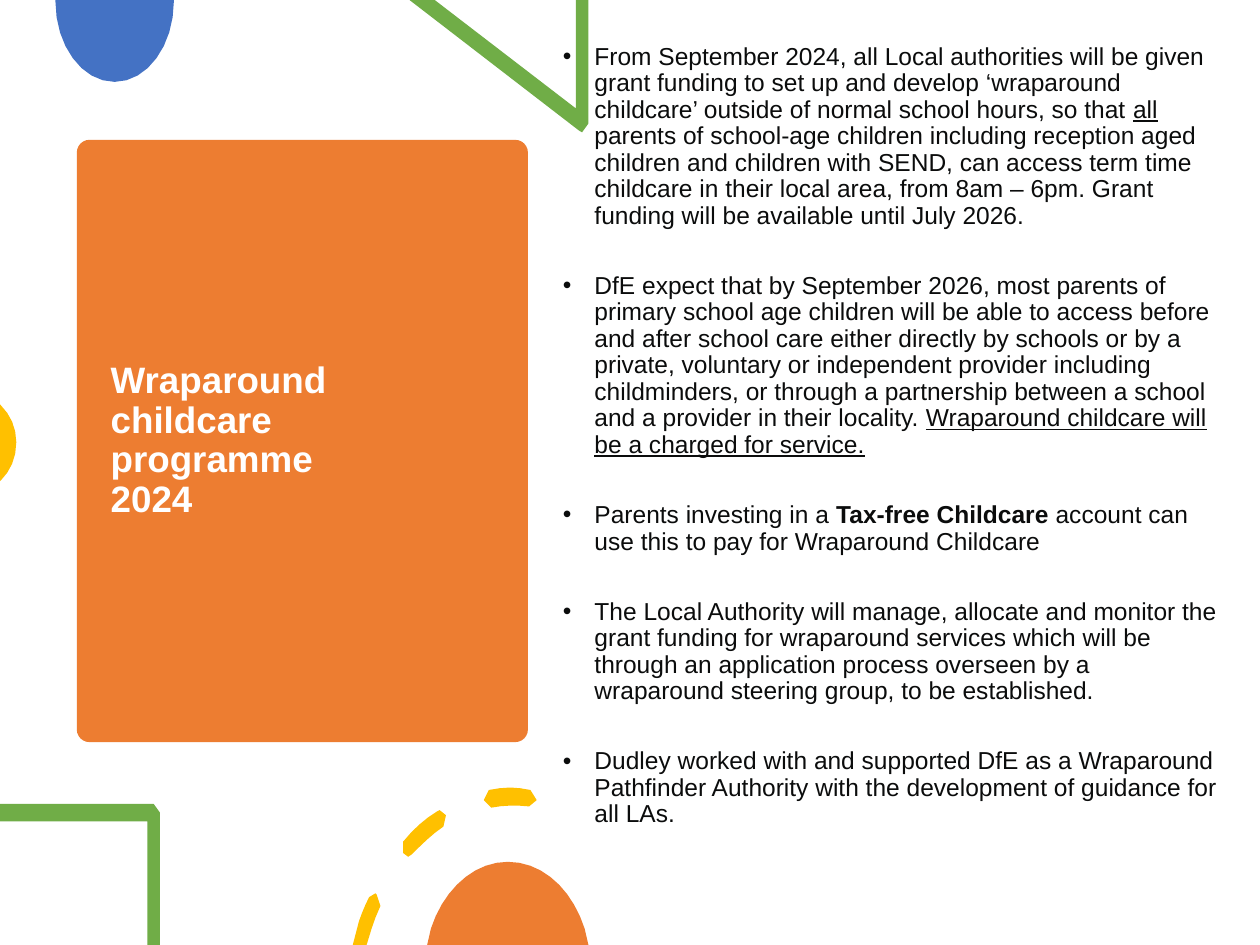
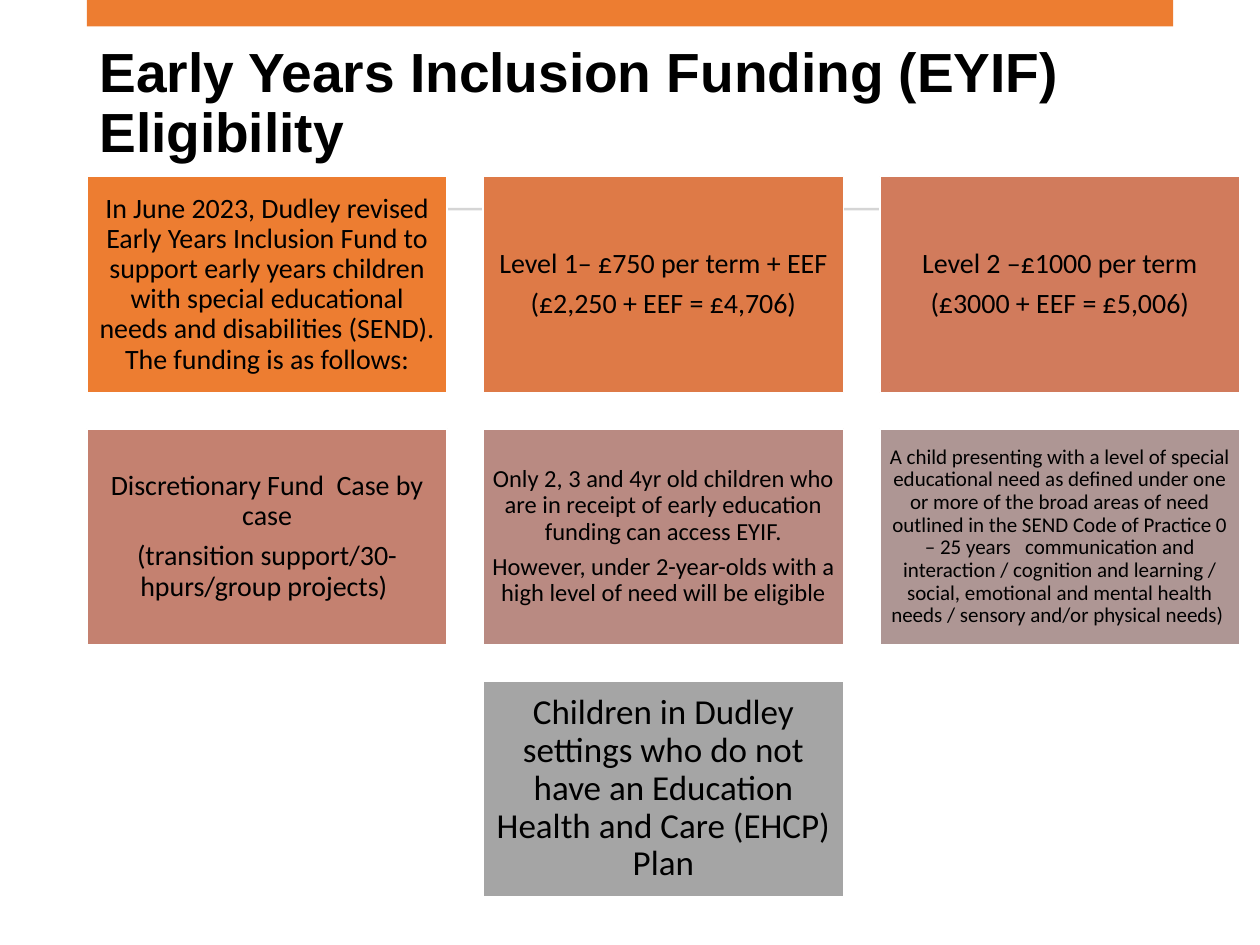
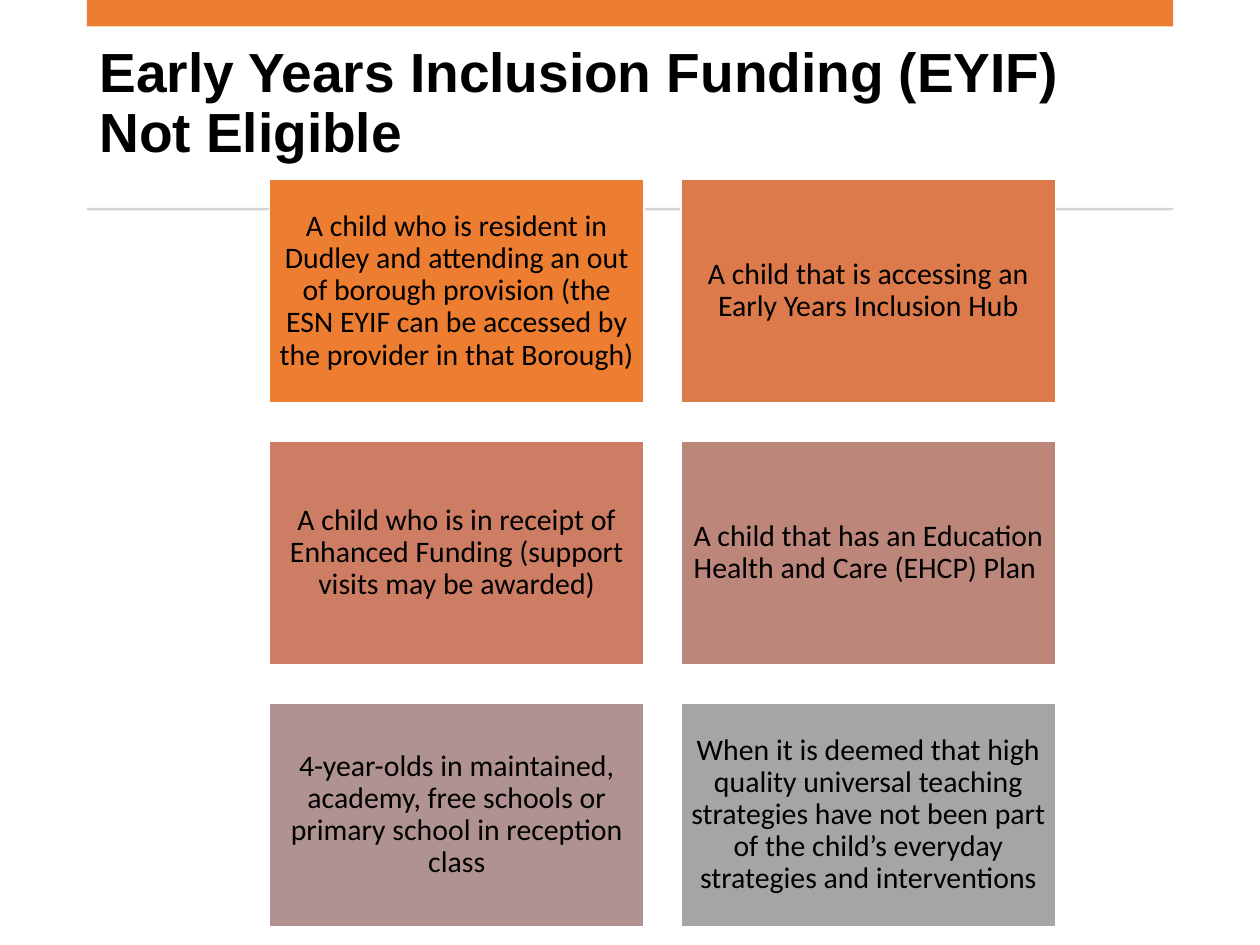
"""Build three slides on wraparound childcare and early years inclusion funding."""
import math

import pptx
import pptx.dml.color
import pptx.enum.shapes
import pptx.enum.text
import pptx.oxml
import pptx.oxml.ns
import pptx.util

Inches = pptx.util.Inches
Pt = pptx.util.Pt
SHAPES = pptx.enum.shapes.MSO_SHAPE
ALIGN = pptx.enum.text.PP_ALIGN
MIDDLE = pptx.enum.text.MSO_ANCHOR.MIDDLE
TOP = pptx.enum.text.MSO_ANCHOR.TOP

COLOURS = {
    "white": "FFFFFF", "black": "000000", "ink": "0B0C0C", "rule": "D5D5D5",
    "orange": "ED7D31", "blue": "4472C4", "green": "70AD47", "yellow": "FFC000",
    "grey": "A5A5A5", "copper": "DE7A47", "terracotta": "D17B5C",
    "clay": "C48170", "rose": "B98A82", "mauve": "AE9694",
    "amber": "DC7A4B", "brick": "CC7D64", "blush": "BD867B", "dusk": "B09391",
}

HEADING_FONT = {"name": "Arial", "bold": True}
BODY_FONT = {"name": "Arial", "size": Pt(14)}
TILE_FONT = {"name": "Calibri"}
TILE_GAP = 0.1
TILE_RATIO = 0.6
STEPS_PER_INCH = 10

CORNER_SHAPES = [
    ("blue", 0.44, 0, [[
        (0.94, 0), (0, 0), (0, 0.01),
        (0, 0.36, 0.21, 0.65, 0.47, 0.65), (0.73, 0.65, 0.94, 0.36, 0.94, 0.01)]]),
    ("green", 3.25, 0, [[
        (1.42, 0), (1.32, 0), (1.32, 0.86), (0.2, 0), (0, 0), (1.35, 1.04),
        (1.36, 1.05, 1.36, 1.05, 1.37, 1.05), (1.4, 1.05, 1.42, 1.02, 1.42, 0.98)]]),
    ("yellow", 0, 3.21, [[
        (0, 0), (0, 0.61), (0.01, 0.6),
        (0.08, 0.53, 0.13, 0.43, 0.13, 0.3), (0.13, 0.18, 0.08, 0.08, 0.01, 0.01)]]),
    ("green", 0, 6.38, [[
        (1.22, 0), (0, 0), (0, 0.14), (1.17, 0.14), (1.17, 1.12), (1.27, 1.12),
        (1.27, 0.07), (1.27, 0.03, 1.25, 0, 1.22, 0)]]),
    ("yellow", 2.8, 6.25, [
        [(0.18, 0.84), (0.16, 0.83, 0.14, 0.85, 0.13, 0.87),
         (0.1, 0.93, 0.07, 1, 0.05, 1.06), (0, 1.25), (0.11, 1.25), (0.15, 1.12),
         (0.17, 1.06, 0.19, 1, 0.22, 0.94), (0.23, 0.91, 0.22, 0.86, 0.19, 0.85)],
        [(0.69, 0.18), (0.68, 0.18, 0.68, 0.18, 0.67, 0.19),
         (0.57, 0.25, 0.48, 0.33, 0.4, 0.43), (0.38, 0.45, 0.38, 0.5, 0.4, 0.52),
         (0.41, 0.54, 0.42, 0.55, 0.44, 0.55), (0.45, 0.55, 0.46, 0.54, 0.47, 0.53),
         (0.55, 0.45, 0.63, 0.37, 0.72, 0.31), (0.74, 0.29, 0.75, 0.25, 0.74, 0.22),
         (0.73, 0.19, 0.71, 0.18, 0.69, 0.18)],
        [(1.25, 0), (1.19, 0, 1.14, 0.01, 1.08, 0.02),
         (1.06, 0.02, 1.04, 0.06, 1.04, 0.1), (1.04, 0.13, 1.06, 0.16, 1.1, 0.16),
         (1.2, 0.14, 1.3, 0.14, 1.4, 0.15), (1.43, 0.16, 1.45, 0.13, 1.46, 0.1),
         (1.46, 0.06, 1.44, 0.02, 1.41, 0.02), (1.36, 0.01, 1.3, 0, 1.25, 0)]]),
    ("orange", 3.39, 6.84, [[
        (0.64, 0), (0.37, 0, 0.13, 0.22, 0.03, 0.53), (0, 0.66), (1.28, 0.66),
        (1.25, 0.53), (1.15, 0.22, 0.92, 0, 0.64, 0)]]),
]

PROGRAMME_POINTS = [
    [("From September 2024, all Local authorities will be given grant funding to set up "
      "and develop ‘wraparound childcare’ outside of normal school hours, so that ", {}),
     ("all", {"underline": True}),
     (" parents of school-age children including reception aged children and children "
      "with SEND, can access term time childcare in their local area, from 8am – 6pm. "
      "Grant funding will be available until July 2026.", {})],
    [("DfE expect that by September 2026, most parents of primary school age children "
      "will be able to access before and after school care either directly by schools "
      "or by a private, voluntary or independent provider including childminders, or "
      "through a partnership between a school and a provider in their locality. ", {}),
     ("Wraparound childcare will be a charged for service.", {"underline": True})],
    [("Parents investing in a ", {}),
     ("Tax-free Childcare ", {"bold": True}),
     ("account can use this to pay for Wraparound Childcare", {})],
    [("The Local Authority will manage, allocate and monitor the grant funding for "
      "wraparound services which will be through an application process overseen by a "
      "wraparound steering group, to be established.", {})],
    [("Dudley worked with and supported DfE as a Wraparound Pathfinder Authority with "
      "the development of guidance for all LAs.", {})],
]

ELIGIBLE_TILES = [
    ("orange", 16, ["In June 2023, Dudley revised Early Years Inclusion Fund to support "
                    "early years children with special educational needs and disabilities "
                    "(SEND). The funding is as follows:"]),
    ("copper", 16, ["Level 1– £750 per term + EEF", "(£2,250 + EEF = £4,706)"]),
    ("terracotta", 16, ["Level 2 –£1000 per term", "(£3000 + EEF = £5,006)"]),
    ("clay", 16, ["Discretionary Fund  Case by case",
                  "(transition support/30-hpurs/group projects) "]),
    ("rose", 14, ["Only 2, 3 and 4yr old children who are in receipt of early education "
                  "funding can access EYIF.",
                  "However, under 2-year-olds with a high level of need will be eligible"]),
    ("mauve", 12, ["A child presenting with a level of special educational need as defined "
                   "under one or more of the broad areas of need outlined in the SEND Code "
                   "of Practice 0 – 25 years   communication and interaction / cognition "
                   "and learning / social, emotional and mental health needs / sensory "
                   "and/or physical needs) "]),
    ("grey", 20, ["Children in Dudley settings who do not have an Education Health and "
                  "Care (EHCP) Plan"]),
]

NOT_ELIGIBLE_TILES = [
    ("orange", 17, ["A child who is resident in Dudley and attending an out of borough "
                    "provision (the ESN EYIF can be accessed by the provider in that "
                    "Borough)"]),
    ("amber", 17, ["A child that is accessing an Early Years Inclusion Hub"]),
    ("brick", 17, ["A child who is in receipt of Enhanced Funding (support visits may be "
                   "awarded)"]),
    ("blush", 17, ["A child that has an Education Health and Care (EHCP) Plan "]),
    ("dusk", 17, ["4-year-olds in maintained, academy, free schools or primary school in "
                  "reception class"]),
    ("grey", 17, ["When it is deemed that high quality universal teaching strategies have "
                  "not been part of the child’s everyday strategies and interventions"]),
]


def rgb(colour):
    """Return the named colour."""
    return pptx.dml.color.RGBColor.from_string(COLOURS[colour])


def apply_format(target, values):
    """Set each attribute of the target from a dict."""
    for name, value in values.items():
        setattr(target, name, value)


def format_run(run, colour, values):
    """Give a run its colour and font values."""
    apply_format(run.font, values)
    run.font.color.rgb = rgb(colour)


def paint(shape, fill, line=None):
    """Fill a shape, outline it if asked, and remove its shadow."""
    shape.shadow.inherit = False
    shape.fill.solid()
    shape.fill.fore_color.rgb = rgb(fill)
    if line:
        shape.line.color.rgb = rgb(line)
        shape.line.width = Pt(1)
    else:
        shape.line.fill.background()


def add_panel(slide, box, fill, kind=SHAPES.RECTANGLE, line=None):
    """Add a filled preset shape in a box given in inches."""
    shape = slide.shapes.add_shape(kind, *map(Inches, box))
    paint(shape, fill, line)
    return shape


def add_text_frame(slide, box, anchor):
    """Add a wrapping text box and return its frame."""
    frame = slide.shapes.add_textbox(*map(Inches, box)).text_frame
    apply_format(frame, {"word_wrap": True, "vertical_anchor": anchor})
    return frame


def add_heading(slide, box, text, size, colour):
    """Add a bold heading, centred vertically in its box."""
    paragraph = add_text_frame(slide, box, MIDDLE).paragraphs[0]
    apply_format(paragraph, {"text": text, "line_spacing": 0.9})
    for run in paragraph.runs:
        format_run(run, colour, {**HEADING_FONT, "size": Pt(size)})


def next_paragraph(frame, index):
    """Return the first paragraph of a frame, or a new one after it."""
    return frame.add_paragraph() if index else frame.paragraphs[0]


def add_bullet(paragraph):
    """Give a paragraph a round bullet with a hanging indent."""
    properties = paragraph._p.get_or_add_pPr()
    properties.set("marL", str(Inches(0.25)))
    properties.set("indent", str(-Inches(0.25)))
    properties.append(pptx.oxml.parse_xml(
        f'<a:buFont {pptx.oxml.ns.nsdecls("a")} typeface="Arial"/>'))
    properties.append(pptx.oxml.parse_xml(
        f'<a:buChar {pptx.oxml.ns.nsdecls("a")} char="•"/>'))


def add_bullet_list(slide, box, points):
    """Add a list of bulleted paragraphs made of formatted runs."""
    frame = add_text_frame(slide, box, TOP)
    for index, point in enumerate(points):
        paragraph = next_paragraph(frame, index)
        add_bullet(paragraph)
        apply_format(paragraph, {"line_spacing": 0.9, "space_after": Pt(15),
                                 "space_before": Pt(10 if index else 0)})
        for text, emphasis in point:
            run = paragraph.add_run()
            run.text = text
            format_run(run, "ink", {**BODY_FONT, **emphasis})


def trace(steps):
    """Turn points and cubic curves in inches into a list of points in length units."""
    points = []
    for step in steps:
        if len(step) == 2:
            points.append(step)
            continue
        controls = [points[-1], step[:2], step[2:4], step[4:]]
        total = math.ceil(STEPS_PER_INCH * math.dist(controls[0], controls[3]))
        for count in range(1, total + 1):
            t = count / total
            weights = [(1 - t) ** 3, 3 * t * (1 - t) ** 2, 3 * t * t * (1 - t), t ** 3]
            points.append(tuple(
                sum(weight * control[axis] for weight, control in zip(weights, controls))
                for axis in (0, 1)))
    return [(Inches(x), Inches(y)) for x, y in points]


def add_outline(slide, left, top, contours, fill):
    """Add a filled freeform whose contours start from the given corner."""
    first, *others = [trace(contour) for contour in contours]
    builder = slide.shapes.build_freeform(*first[0])
    builder.add_line_segments(first[1:], close=True)
    for points in others:
        builder.move_to(*points[0])
        builder.add_line_segments(points[1:], close=True)
    paint(builder.convert_to_shape(Inches(left), Inches(top)), fill)


def add_tile(slide, box, fill, size, lines):
    """Add one tile with centred text."""
    frame = add_panel(slide, box, fill, line="white").text_frame
    sides = ("left", "top", "right", "bottom")
    apply_format(frame, {f"margin_{side}": Pt(0.3 * size) for side in sides})
    apply_format(frame, {"word_wrap": True, "vertical_anchor": MIDDLE})
    for index, line in enumerate(lines):
        paragraph = next_paragraph(frame, index)
        apply_format(paragraph, {"text": line, "alignment": ALIGN.CENTER,
                                 "line_spacing": 0.9, "space_after": Pt(0.35 * size)})
        format_run(paragraph.runs[0], "black", {**TILE_FONT, "size": Pt(size)})


def add_tile_grid(slide, left, top, width, columns, tiles):
    """Lay tiles out in rows, with a short last row centred."""
    step_across = width * (1 + TILE_GAP)
    step_down = width * (TILE_RATIO + TILE_GAP)
    for index, tile in enumerate(tiles):
        row, column = divmod(index, columns)
        in_row = min(columns, len(tiles) - row * columns)
        column += (columns - in_row) / 2
        box = (left + column * step_across, top + row * step_down,
               width, width * TILE_RATIO)
        add_tile(slide, box, *tile)


def add_programme_slide(slide):
    """Build the slide with the title card and the bullet list."""
    card = add_panel(slide, (0.61, 1.11, 3.58, 4.78), "orange", SHAPES.ROUNDED_RECTANGLE)
    card.adjustments[0] = 0.028
    add_heading(slide, (0.78, 1.22, 2.02, 4.56),
                "Wraparound childcare programme\n2024", 21, "white")
    for fill, left, top, contours in CORNER_SHAPES:
        add_outline(slide, left, top, contours, fill)
    add_bullet_list(slide, (4.37, 0.3, 5.46, 6.88), PROGRAMME_POINTS)


def add_funding_slide(slide, title, grid, tiles):
    """Build a slide with a top band, a heading, a rule and a grid of tiles."""
    left, width = 0.69, 8.62
    add_heading(slide, (left, 0.37, width, 0.92), title, 31.5, "black")
    add_panel(slide, (left, 0, width, 0.21), "orange")
    add_panel(slide, (left, 1.65, width, 0.02), "rule")
    add_tile_grid(slide, *grid, tiles)


def main():
    """Create the presentation and save it."""
    presentation = pptx.Presentation()
    apply_format(presentation, {"slide_width": Inches(10), "slide_height": Inches(7.5)})
    blank = presentation.slide_layouts[6]
    add_programme_slide(presentation.slides.add_slide(blank))
    add_funding_slide(presentation.slides.add_slide(blank),
                      "Early Years Inclusion Funding (EYIF) Eligibility",
                      (0.69, 1.4, 2.86, 3), ELIGIBLE_TILES)
    add_funding_slide(presentation.slides.add_slide(blank),
                      "Early Years Inclusion Funding (EYIF) Not Eligible",
                      (2.14, 1.42, 2.97, 2), NOT_ELIGIBLE_TILES)
    presentation.save("out.pptx")


if __name__ == "__main__":
    main()
